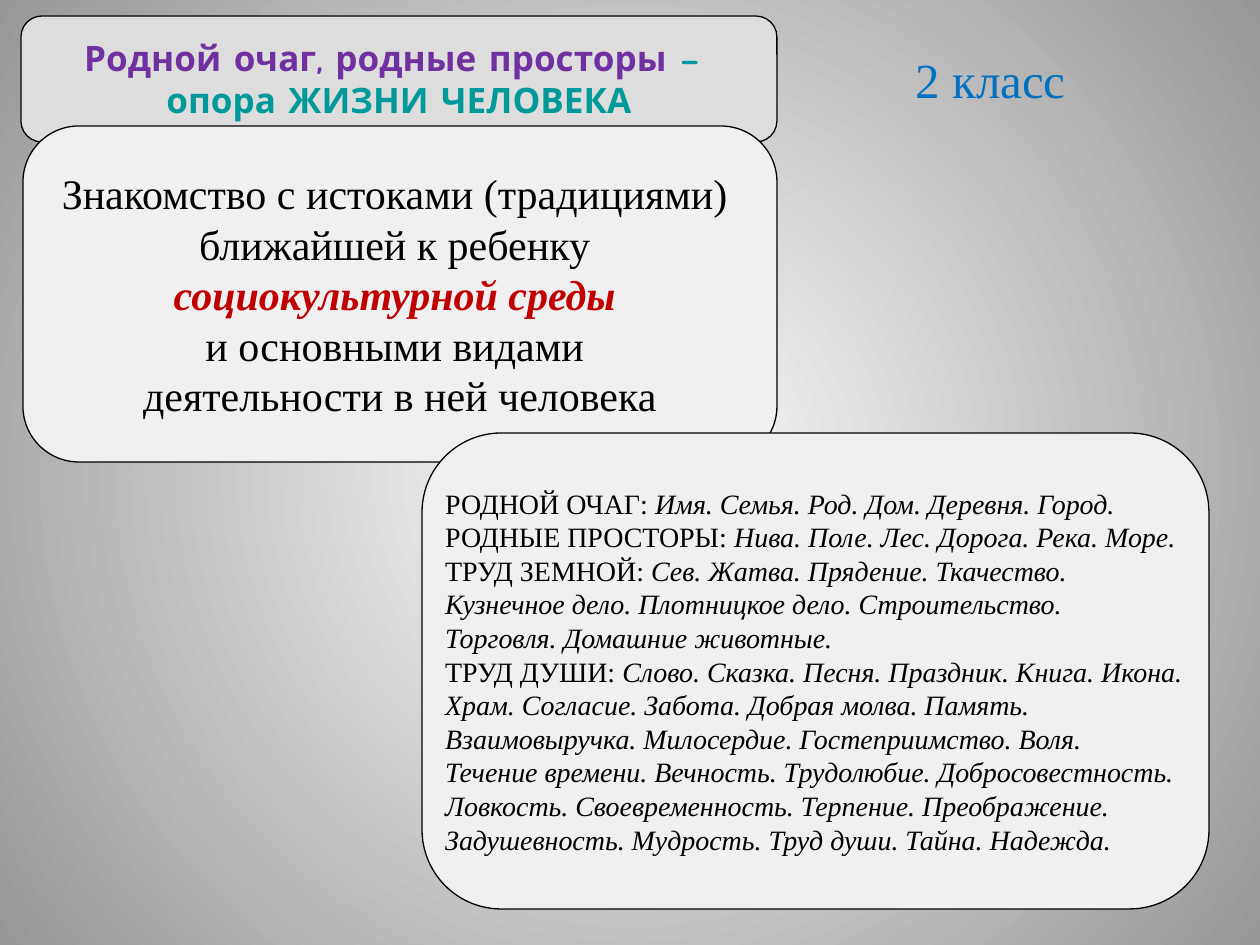
"""Builds the second-grade course slide with its theme, aim and topic panels."""
from dataclasses import dataclass

from lxml import etree
from pptx import Presentation
from pptx.dml.color import RGBColor
from pptx.enum.shapes import MSO_SHAPE
from pptx.enum.text import MSO_ANCHOR, MSO_AUTO_SIZE, PP_ALIGN
from pptx.oxml.ns import qn
from pptx.util import Emu, Pt

ROUNDED = MSO_SHAPE.ROUNDED_RECTANGLE
MIDDLE, TOP = MSO_ANCHOR.MIDDLE, MSO_ANCHOR.TOP
CENTER, LEFT = PP_ALIGN.CENTER, PP_ALIGN.LEFT
GROW = MSO_AUTO_SIZE.SHAPE_TO_FIT_TEXT
TITLE_ONLY = 5
EMU_PER_PX = 914400 / 126
SERIF, ROUND_HAND = "Times New Roman", "Comic Neue"
BLACK, PURPLE, TEAL, RED, BLUE = "000000", "7030A0", "009999", "C00000", "0070C0"


@dataclass(frozen=True)
class Span:
    text: str
    color: str = BLACK
    bold: bool = False
    italic: bool = False


@dataclass(frozen=True)
class Panel:
    box: tuple[int, int, int, int]
    fill: str
    font: str
    size: int
    align: PP_ALIGN
    lines: list[list[Span]]


def px(length: int) -> Emu:
    return Emu(round(length * EMU_PER_PX))


def rgb(color: str) -> RGBColor:
    return RGBColor.from_string(color)


def topic(names: str, heading: str = "") -> list[Span]:
    start = [Span(heading)] if heading else []
    return start + [Span(names, italic=True)]


def write_line(paragraph, spans: list[Span], font: str, size: int, align: PP_ALIGN) -> None:
    paragraph.alignment = align
    paragraph.font.name = font
    paragraph.font.size = Pt(size)
    for span in spans:
        run = paragraph.add_run()
        run.text = span.text
        run.font.color.rgb = rgb(span.color)
        run.font.bold = span.bold
        run.font.italic = span.italic


def draw_panel(slide, panel: Panel) -> None:
    shape = slide.shapes.add_shape(ROUNDED, *map(px, panel.box))
    shape.shadow.inherit = False
    shape.fill.solid()
    shape.fill.fore_color.rgb = rgb(panel.fill)
    shape.line.color.rgb = rgb(BLACK)
    shape.line.width = Pt(0.75)
    frame = shape.text_frame
    frame.word_wrap = False
    frame.vertical_anchor = MIDDLE
    frame.margin_left = frame.margin_right = frame.margin_top = frame.margin_bottom = 0
    for index, spans in enumerate(panel.lines):
        paragraph = frame.add_paragraph() if index else frame.paragraphs[0]
        write_line(paragraph, spans, panel.font, panel.size, panel.align)


def draw_title(slide, text: str, box: tuple[int, int, int, int]) -> None:
    title = slide.shapes.title
    title.left, title.top, title.width, title.height = map(px, box)
    frame = title.text_frame
    frame.word_wrap = False
    frame.auto_size = GROW
    frame.vertical_anchor = TOP
    write_line(frame.paragraphs[0], [Span(text, BLUE)], SERIF, 28, LEFT)


def paint_background(slide, center: str, edge: str) -> None:
    fill = slide.background.fill
    fill.gradient()
    for stop, color in zip(fill.gradient_stops, (center, edge)):
        stop.color.rgb = rgb(color)
    linear = next(slide.background._cSld.iter(qn("a:lin")))
    circle = etree.Element(qn("a:path"), path="circle")
    etree.SubElement(circle, qn("a:fillToRect"), dict.fromkeys("ltrb", "50000"))
    linear.getparent().replace(linear, circle)


PANELS = [
    Panel((21, 16, 756, 126), "DDDDDD", ROUND_HAND, 20, CENTER, [
        [Span("Родной очаг, родные просторы ", PURPLE, bold=True), Span("– ", TEAL, bold=True)],
        [Span("опора ЖИЗНИ ЧЕЛОВЕКА", TEAL, bold=True)],
    ]),
    Panel((23, 126, 754, 336), "F0F0F0", SERIF, 24, CENTER, [
        [Span("Знакомство с истоками (традициями) ")],
        [Span("ближайшей к ребенку ")],
        [Span("социокультурной среды ", RED, bold=True, italic=True)],
        [Span("и основными видами ")],
        [Span("деятельности в ней человека")],
    ]),
    Panel((422, 433, 787, 476), "F0F0F0", SERIF, 16, LEFT, [
        topic("Имя. Семья. Род. Дом. Деревня. Город.", "РОДНОЙ ОЧАГ: "),
        topic("Нива. Поле. Лес. Дорога. Река. Море.", "РОДНЫЕ ПРОСТОРЫ: "),
        topic("Сев. Жатва. Прядение. Ткачество.", "ТРУД ЗЕМНОЙ: "),
        topic("Кузнечное дело. Плотницкое дело. Строительство."),
        topic("Торговля. Домашние животные."),
        topic("Слово. Сказка. Песня. Праздник. Книга. Икона.", "ТРУД ДУШИ: "),
        topic("Храм. Согласие. Забота. Добрая молва. Память."),
        topic("Взаимовыручка. Милосердие. Гостеприимство. Воля."),
        topic("Течение времени. Вечность. Трудолюбие. Добросовестность."),
        topic("Ловкость. Своевременность. Терпение. Преображение."),
        topic("Задушевность. Мудрость. Труд души. Тайна. Надежда."),
    ]),
]


def main() -> None:
    deck = Presentation()
    deck.slide_width, deck.slide_height = px(1260), px(945)
    slide = deck.slides.add_slide(deck.slide_layouts[TITLE_ONLY])
    paint_background(slide, "FFFFFF", "979797")
    draw_title(slide, "2 класс", (903, 43, 176, 72))
    for panel in PANELS:
        draw_panel(slide, panel)
    deck.save("out.pptx")


if __name__ == "__main__":
    main()
